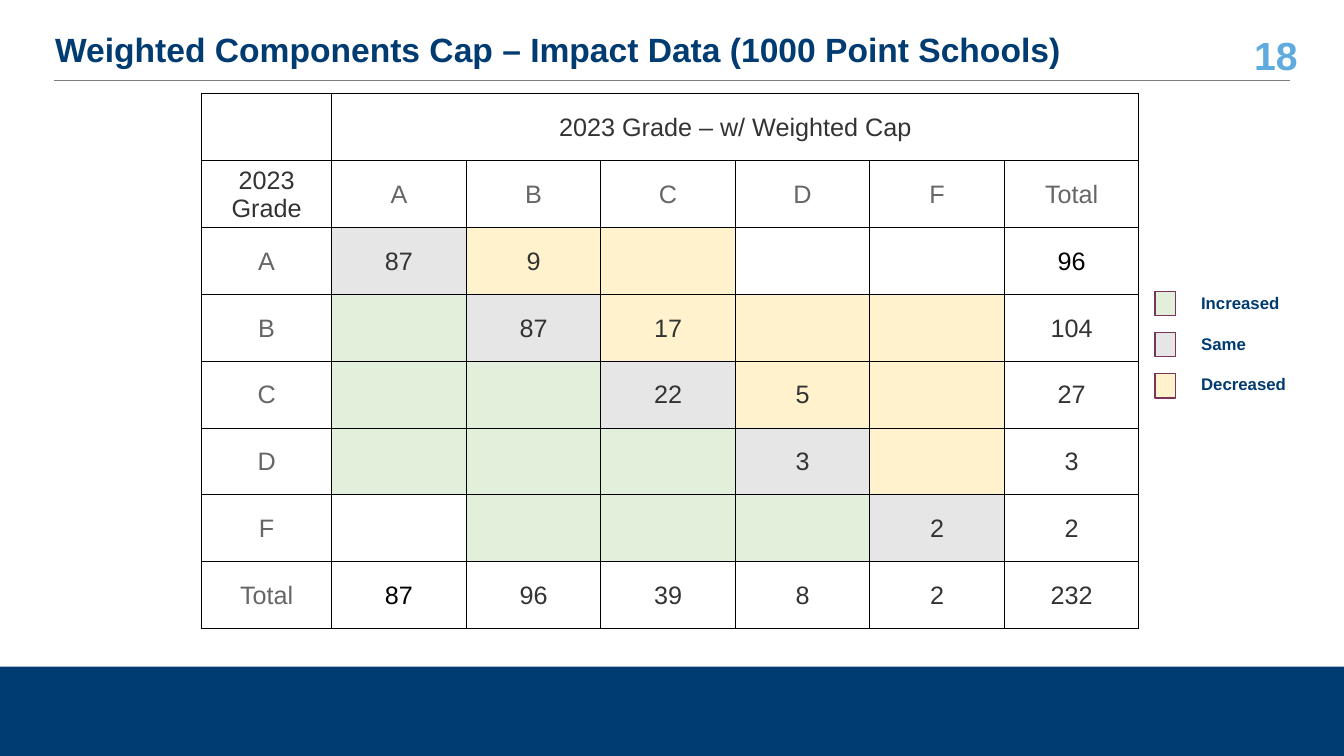
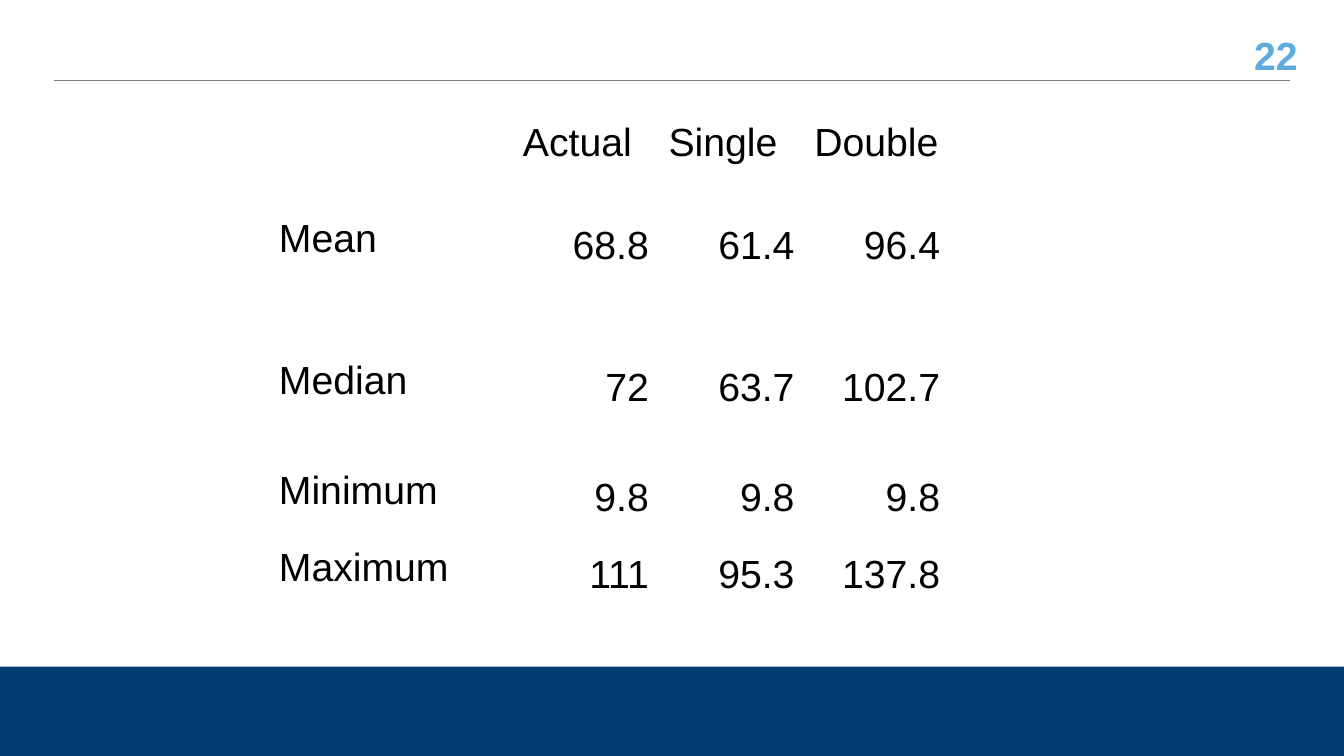
from lxml.etree import SubElement
from pptx import Presentation
from pptx.dml.color import RGBColor
from pptx.enum.shapes import MSO_CONNECTOR, MSO_SHAPE
from pptx.enum.text import MSO_ANCHOR, PP_ALIGN
from pptx.oxml.ns import qn
from pptx.util import Cm, Pt

NAVY = "003B71"
SKY = "5FAADE"
RULE_GREY = "7F7F7F"
PLUM = "793558"
BLACK = "000000"
DARK_GREY = "333333"
MID_GREY = "666666"
INCREASED = "E2EFDA"
SAME = "E7E6E6"
DECREASED = "FFF2CC"


def color(hex_string):
    return RGBColor.from_string(hex_string)


class Deck:
    """Holds the shared style and the slide being built."""

    font_name = "Arial"
    width, height = 33.87, 19.05
    band_top = 16.8

    def __init__(self):
        self.presentation = Presentation()
        self.presentation.slide_width = Cm(self.width)
        self.presentation.slide_height = Cm(self.height)
        self.slide = None

    def new_slide(self, number, title=None):
        layout = self.presentation.slide_layouts[6]
        self.slide = self.presentation.slides.add_slide(layout)
        self.rectangle(0, self.band_top, self.width, self.height - self.band_top, NAVY)
        self.text(30.66, 0.84, 2.29, 1.07, [number], 28, SKY, align=PP_ALIGN.RIGHT)
        self.line(32.51, 2.03, 1.37, 2.03, RULE_GREY, 0.75)
        if title:
            self.text(1.14, 0.76, 29.46, 1.07, [title], 24, NAVY, line_spacing=0.9)

    def rectangle(self, left, top, width, height, fill, outline=None):
        shape = self.slide.shapes.add_shape(
            MSO_SHAPE.RECTANGLE, Cm(left), Cm(top), Cm(width), Cm(height))
        shape.shadow.inherit = False
        shape.fill.solid()
        shape.fill.fore_color.rgb = color(fill)
        if outline:
            shape.line.color.rgb = color(outline)
            shape.line.width = Pt(1)
        else:
            shape.line.fill.background()

    def line(self, x1, y1, x2, y2, line_color, points):
        connector = self.slide.shapes.add_connector(
            MSO_CONNECTOR.STRAIGHT, Cm(x1), Cm(y1), Cm(x2), Cm(y2))
        connector.line.color.rgb = color(line_color)
        connector.line.width = Pt(points)
        SubElement(connector._element.spPr, qn("a:effectLst"))

    def run(self, paragraph, text, size, text_color, bold=False):
        run = paragraph.add_run()
        run.text = text
        run.font.name = self.font_name
        run.font.size = Pt(size)
        run.font.bold = bold
        run.font.color.rgb = color(text_color)

    def text(self, left, top, width, height, lines, size, text_color,
             align=PP_ALIGN.LEFT, line_spacing=None, gap=0):
        """Add bold, vertically centred text with a gap in points between lines."""
        box = self.slide.shapes.add_textbox(Cm(left), Cm(top), Cm(width), Cm(height))
        frame = box.text_frame
        frame.word_wrap = True
        frame.vertical_anchor = MSO_ANCHOR.MIDDLE
        for index, line in enumerate(lines):
            paragraph = frame.add_paragraph() if index else frame.paragraphs[0]
            paragraph.alignment = align
            paragraph.line_spacing = line_spacing
            if index:
                paragraph.space_before = Pt(gap)
            self.run(paragraph, line, size, text_color, bold=True)

    def table(self, left, top, widths, heights):
        """Add a table without any banding, fills or header style."""
        table = self.slide.shapes.add_table(
            len(heights), len(widths), Cm(left), Cm(top),
            Cm(sum(widths)), Cm(sum(heights))).table
        table.first_row = False
        table.horz_banding = False
        for column, width in zip(table.columns, widths):
            column.width = Cm(width)
        for row, height in zip(table.rows, heights):
            row.height = Cm(height)
        for cell in table.iter_cells():
            cell.fill.background()
        return table

    def cell(self, cell, text, size, text_color, align, margins,
             anchor=MSO_ANCHOR.TOP, line_spacing=None):
        """Fill a cell; margins are left, top, right and bottom."""
        (cell.margin_left, cell.margin_top,
         cell.margin_right, cell.margin_bottom) = map(Cm, margins)
        cell.vertical_anchor = anchor
        paragraph = cell.text_frame.paragraphs[0]
        paragraph.alignment = align
        paragraph.line_spacing = line_spacing
        if text:
            self.run(paragraph, text, size, text_color)

    def cell_box(self, cell, fill=None):
        """Give a cell thin black borders and an optional fill."""
        properties = cell._tc.get_or_add_tcPr()
        for position, side in enumerate(("lnL", "lnR", "lnT", "lnB")):
            border = properties.makeelement(qn(f"a:{side}"), {"w": str(Pt(0.75))})
            solid = SubElement(border, qn("a:solidFill"))
            SubElement(solid, qn("a:srgbClr"), val=BLACK)
            properties.insert(position, border)
        if fill:
            cell.fill.solid()
            cell.fill.fore_color.rgb = color(fill)


GRADES = "ABCDF"
UNSHADED = {("A", "D"), ("A", "F"), ("F", "A")}
BLACK_TOTALS = {("A", "Total"), ("Total", "A")}
GRADE_ROWS = [
    ["", "2023 Grade – w/ Weighted Cap", "", "", "", "", ""],
    ["2023 Grade", *GRADES, "Total"],
    ["A", "87", "9", "", "", "", "96"],
    ["B", "", "87", "17", "", "", "104"],
    ["C", "", "", "22", "5", "", "27"],
    ["D", "", "", "", "3", "", "3"],
    ["F", "", "", "", "", "2", "2"],
    ["Total", "87", "96", "39", "8", "2", "232"],
]


def grade_change_fill(before, after):
    if before not in GRADES or after not in GRADES or (before, after) in UNSHADED:
        return None
    if before == after:
        return SAME
    return DECREASED if after > before else INCREASED


def grade_text_color(text, before, after):
    if text in (*GRADES, "Total"):
        return MID_GREY
    return BLACK if (before, after) in BLACK_TOTALS else DARK_GREY


def weighted_cap_slide(deck):
    deck.new_slide("18", "Weighted Components Cap – Impact Data (1000 Point Schools)")
    row_count = len(GRADE_ROWS)
    table = deck.table(5.08, 2.36, [3.28] + [3.39] * 6, [13.48 / row_count] * row_count)
    for row, values in enumerate(GRADE_ROWS):
        for column, text in enumerate(values):
            before, after = values[0], GRADE_ROWS[1][column]
            cell = table.cell(row, column)
            deck.cell(cell, text, 18, grade_text_color(text, before, after),
                      PP_ALIGN.CENTER, (0.03, 0.03, 0.03, 0), MSO_ANCHOR.MIDDLE)
            in_body = row > 1 and column > 0
            deck.cell_box(cell, grade_change_fill(before, after) if in_body else None)
    table.cell(0, 1).merge(table.cell(0, 6))

    legend = {"Increased": INCREASED, "Same": SAME, "Decreased": DECREASED}
    for index, fill in enumerate(legend.values()):
        deck.rectangle(29.11, 7.34 + index * 1.04, 0.51, 0.61, fill, PLUM)
    deck.text(30.02, 6.68, 3.05, 3.96, legend, 12, NAVY, gap=14.5)


def summary_slide(deck):
    deck.new_slide("22")
    rows = [
        ["", "Actual", "Single", "Double"],
        ["Mean", "68.8", "61.4", "96.4"],
        ["Median", "72", "63.7", "102.7"],
        ["Minimum", "9.8", "9.8", "9.8"],
        ["Maximum", "111", "95.3", "137.8"],
    ]
    table = deck.table(6.78, 2.79, [6.15] + [3.67] * 3, [2.44, 3.58, 2.77, 1.93, 2.77])
    for row, values in enumerate(rows):
        for column, text in enumerate(values):
            is_value = row > 0 and column > 0
            deck.cell(table.cell(row, column), text, 28, BLACK,
                      PP_ALIGN.RIGHT if is_value else PP_ALIGN.LEFT, [0.25] * 4,
                      line_spacing=1.15 if is_value else None)


def main():
    deck = Deck()
    weighted_cap_slide(deck)
    summary_slide(deck)
    deck.presentation.save("out.pptx")


if __name__ == "__main__":
    main()
